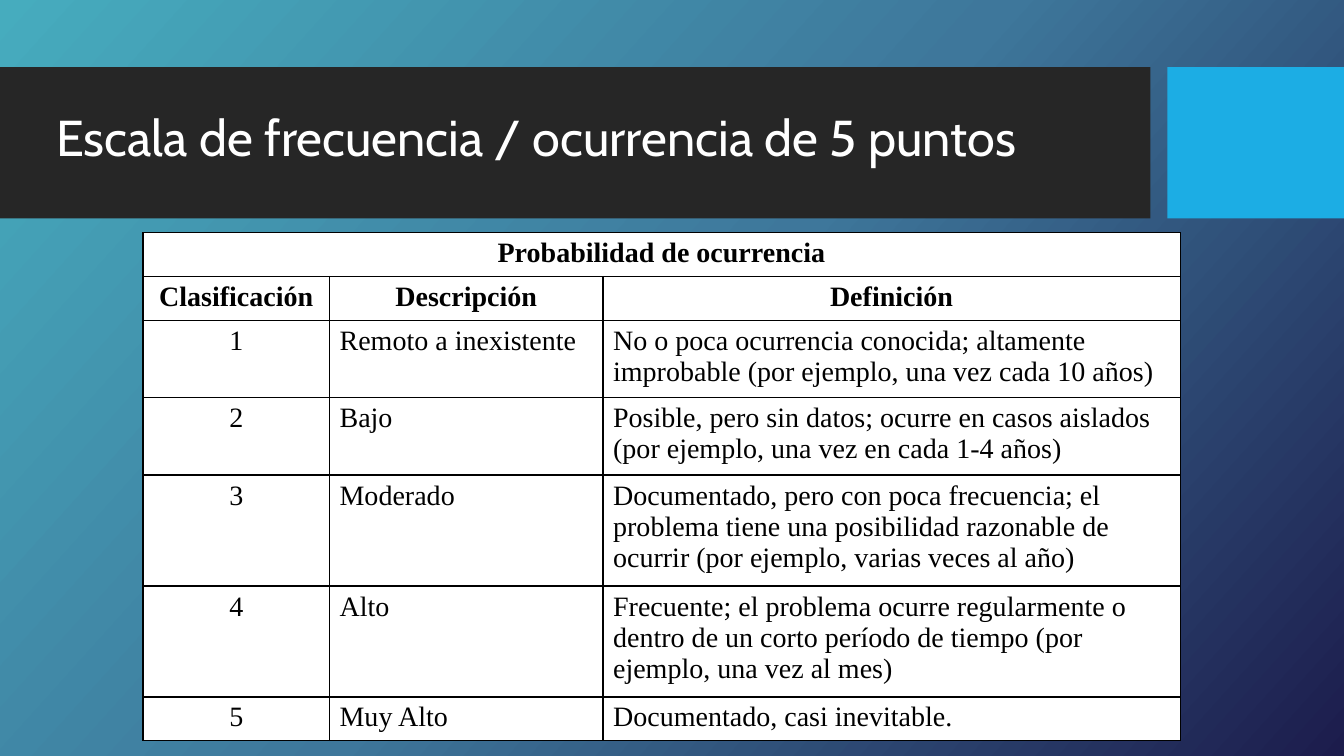
from copy import deepcopy
from dataclasses import dataclass

from lxml import etree
from pptx import Presentation
from pptx.dml.color import RGBColor
from pptx.enum.shapes import MSO_SHAPE
from pptx.enum.text import MSO_ANCHOR, PP_ALIGN
from pptx.oxml.ns import qn
from pptx.util import Pt

RECT = MSO_SHAPE.RECTANGLE
MIDDLE = MSO_ANCHOR.MIDDLE
LEFT, CENTER = PP_ALIGN.LEFT, PP_ALIGN.CENTER


@dataclass(frozen=True)
class Theme:
    band: str = "262626"
    accent: str = "1CADE4"
    white: str = "FFFFFF"
    black: str = "000000"
    gradient: tuple = ("46ACBE", "3E779B", "1C1C4C")
    gradient_angle: int = 42
    title_font: str = "Cabin"
    title_size: int = 36
    table_font: str = "Times New Roman"
    table_size: int = 20


TITLE = "Escala de frecuencia / ocurrencia de 5 puntos"
HEADERS = [
    ("Probabilidad de ocurrencia", "", ""),
    ("Clasificación", "Descripción", "Definición"),
]
LEVELS = [
    ("1", "Remoto a inexistente",
     "No o poca ocurrencia conocida; altamente improbable "
     "(por ejemplo, una vez cada 10 años)"),
    ("2", "Bajo",
     "Posible, pero sin datos; ocurre en casos aislados "
     "(por ejemplo, una vez en cada 1-4 años)"),
    ("3", "Moderado",
     "Documentado, pero con poca frecuencia; el problema tiene una "
     "posibilidad razonable de ocurrir (por ejemplo, varias veces al año)"),
    ("4", "Alto",
     "Frecuente; el problema ocurre regularmente o dentro de un corto "
     "período de tiempo (por ejemplo, una vez al mes)"),
    ("5", "Muy Alto", "Documentado, casi inevitable."),
]
COL_WIDTHS = (133.2, 195.4, 412.2)
ONE_LINE, TWO_LINES, THREE_LINES = 31.3, 55, 79.2
ROW_HEIGHTS = (ONE_LINE, ONE_LINE, TWO_LINES, TWO_LINES,
               THREE_LINES, THREE_LINES, ONE_LINE)


class SlideBuilder:
    def __init__(self, s, theme):
        self.s = s
        self.theme = theme

    def background(self):
        """Fill the slide with evenly spaced gradient stops."""
        fill = self.s.background.fill
        fill.gradient()
        colors = self.theme.gradient
        stop_list = self.s.element.find(".//" + qn("a:gsLst"))
        while len(stop_list) < len(colors):
            stop_list.append(deepcopy(stop_list[0]))
        for i, (stop, color) in enumerate(zip(fill.gradient_stops, colors)):
            stop.position = i / (len(colors) - 1)
            stop.color.rgb = RGBColor.from_string(color)
        fill.gradient_angle = 360 - self.theme.gradient_angle

    def rect(self, x, y, w, h, color):
        sp = self.s.shapes.add_shape(RECT, Pt(x), Pt(y), Pt(w), Pt(h))
        sp.shadow.inherit = False
        sp.fill.solid()
        sp.fill.fore_color.rgb = RGBColor.from_string(color)
        sp.line.fill.background()

    def font(self, p, name, size, color, bold=False):
        p.font.name = name
        p.font.size = Pt(size)
        p.font.bold = bold
        p.font.color.rgb = RGBColor.from_string(color)

    def title(self, x, y, w, h, text):
        tf = self.s.shapes.add_textbox(Pt(x), Pt(y), Pt(w), Pt(h)).text_frame
        tf.word_wrap = True
        tf.vertical_anchor = MIDDLE
        p = tf.paragraphs[0]
        p.text = text
        p.line_spacing = 0.9
        self.font(p, self.theme.title_font, self.theme.title_size, self.theme.white)

    def borders(self, cell):
        tc_pr = cell._tc.get_or_add_tcPr()
        for side in ("lnL", "lnR", "lnT", "lnB"):
            ln = etree.SubElement(tc_pr, qn(f"a:{side}"), w=str(Pt(1)))
            fill = etree.SubElement(ln, qn("a:solidFill"))
            etree.SubElement(fill, qn("a:srgbClr"), val=self.theme.black)

    def cell(self, cell, text, align, bold):
        self.borders(cell)
        cell.fill.solid()
        cell.fill.fore_color.rgb = RGBColor.from_string(self.theme.white)
        p = cell.text_frame.paragraphs[0]
        p.text = text
        p.alignment = align
        self.font(p, self.theme.table_font, self.theme.table_size,
                  self.theme.black, bold)

    def table(self, x, y, widths, heights, headers, body):
        rows = headers + body
        table = self.s.shapes.add_table(
            len(rows), len(widths), Pt(x), Pt(y),
            Pt(sum(widths)), Pt(sum(heights))).table
        table.first_row = table.horz_banding = False
        for column, width in zip(table.columns, widths):
            column.width = Pt(width)
        for row, height in zip(table.rows, heights):
            row.height = Pt(height)
        for i, texts in enumerate(rows):
            is_header = i < len(headers)
            for j, text in enumerate(texts):
                align = CENTER if is_header or j == 0 else LEFT
                self.cell(table.cell(i, j), text, align, is_header)
        table.cell(0, 0).merge(table.cell(0, len(widths) - 1))


def main():
    prs = Presentation()
    prs.slide_width, prs.slide_height = Pt(960), Pt(540)
    theme = Theme()
    slide = SlideBuilder(prs.slides.add_slide(prs.slide_layouts[6]), theme)
    slide.background()
    slide.rect(0, 48, 821.8, 108, theme.band)
    slide.rect(833.8, 48, 126.2, 108, theme.accent)
    slide.title(33.1, 55.2, 763.2, 90, TITLE)
    slide.table(102.2, 166.2, COL_WIDTHS, ROW_HEIGHTS, HEADERS, LEVELS)
    prs.save("out.pptx")


if __name__ == "__main__":
    main()
